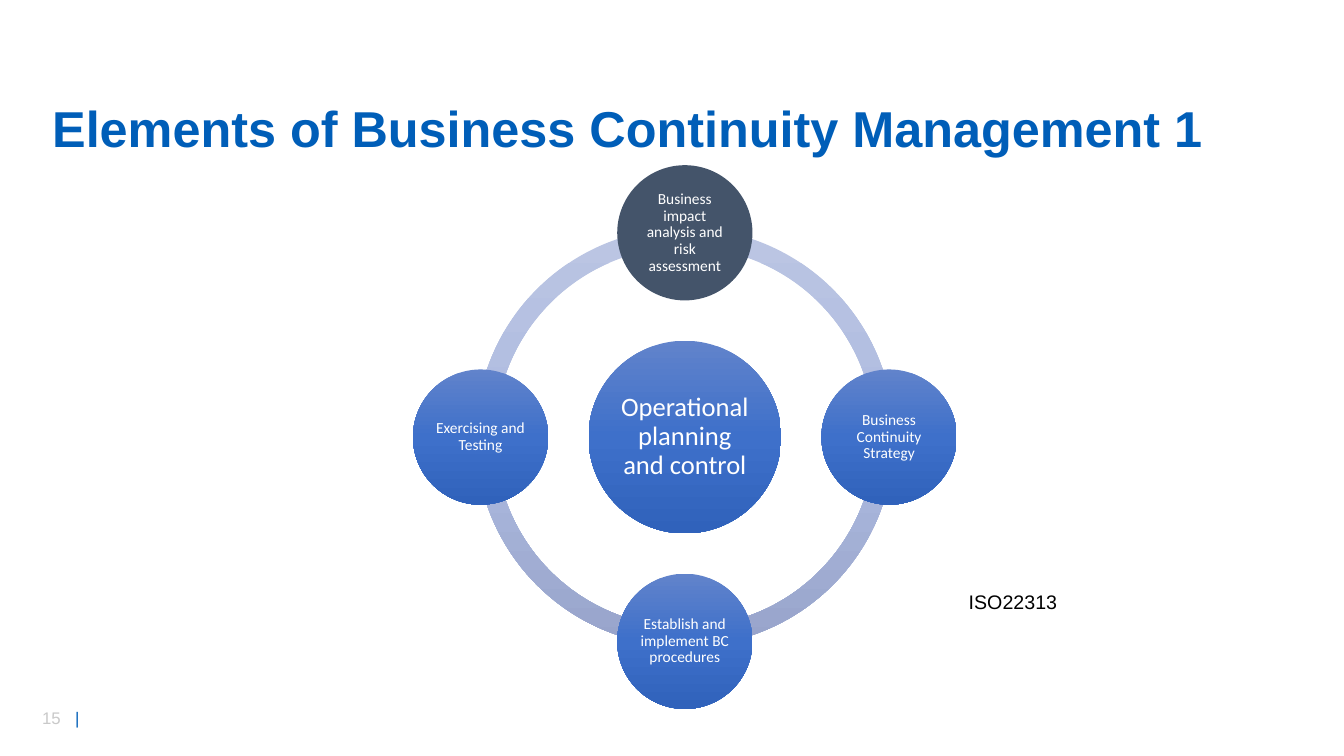
from copy import deepcopy
from dataclasses import dataclass
from math import cos, radians, sin

from lxml.etree import SubElement
from pptx import Presentation
from pptx.dml.color import RGBColor
from pptx.enum.shapes import MSO_SHAPE
from pptx.enum.text import MSO_ANCHOR, PP_ALIGN
from pptx.oxml.ns import qn
from pptx.util import Pt


@dataclass(frozen=True)
class Theme:
    heading_font: str = "Arial"
    diagram_font: str = "Calibri"
    blue: str = "005EB8"
    grey: str = "C9C9C9"
    black: str = "000000"
    white: str = "FFFFFF"
    slate: str = "44546A"
    disc: tuple = ("6183CB", "3E70CA", "3062BB")
    ring: tuple = ("BBC5E3", "AEBBE0", "98A4CB")
    title_size: float = 36
    hub_size: float = 19
    note_size: float = 14
    footer_size: float = 12
    node_size: float = 11


THEME = Theme()


def write_span(para, text, *, size, color, font=THEME.heading_font, bold=False):
    span = para.add_run()
    span.text = text
    span.font.name = font
    span.font.size = Pt(size)
    span.font.bold = bold
    span.font.color.rgb = RGBColor.from_string(color)


def set_frame(shape, *, side, top, anchor):
    frame = shape.text_frame
    frame.word_wrap = True
    frame.vertical_anchor = anchor
    frame.margin_left = frame.margin_right = Pt(side)
    frame.margin_top = frame.margin_bottom = Pt(top)
    return frame.paragraphs[0]


def add_text_box(page, box, *, side=7.2, top=3.6, anchor=MSO_ANCHOR.TOP):
    """Return the first paragraph of a new text box."""
    shape = page.shapes.add_textbox(*map(Pt, box))
    return set_frame(shape, side=side, top=top, anchor=anchor)


def paint(shape, colors):
    """Fill with one colour, or with an even gradient from top to bottom."""
    shape.shadow.inherit = False
    shape.line.fill.background()
    fill = shape.fill
    if isinstance(colors, str):
        fill.solid()
        fill.fore_color.rgb = RGBColor.from_string(colors)
        return
    fill.gradient()
    fill.gradient_angle = 270
    stops = shape._element.spPr.find(qn("a:gradFill")).find(qn("a:gsLst"))
    stops.insert(1, deepcopy(stops[0]))
    for index, (stop, color) in enumerate(zip(fill.gradient_stops, colors)):
        stop.position = index / (len(colors) - 1)
        stop.color.rgb = RGBColor.from_string(color)


def add_round(page, kind, center, diameter, colors):
    x, y = center
    shape = page.shapes.add_shape(kind, Pt(x - diameter / 2), Pt(y - diameter / 2),
                                  Pt(diameter), Pt(diameter))
    paint(shape, colors)
    return shape


def add_disc(page, center, diameter, text, *, size, inset, colors=THEME.disc):
    disc = add_round(page, MSO_SHAPE.OVAL, center, diameter, colors)
    para = set_frame(disc, side=inset, top=inset, anchor=MSO_ANCHOR.MIDDLE)
    para.alignment = PP_ALIGN.CENTER
    para.line_spacing = 0.9
    write_span(para, text, size=size, color=THEME.white, font=THEME.diagram_font)


def add_title(page, box, text):
    para = add_text_box(page, box, anchor=MSO_ANCHOR.MIDDLE)
    para.line_spacing = 0.9
    write_span(para, text, size=THEME.title_size, color=THEME.blue, bold=True)


def add_cycle(page, box, hub, nodes):
    """Draw a hub inside a ring of nodes, clockwise from the top."""
    left, top, side = box
    center = (left + side / 2, top + side / 2)
    node_diameter = 96.6
    orbit = (side - node_diameter) / 2
    step = 360 / len(nodes)

    # Ring, one arc between each pair of nodes
    full_turn = 216  # arc adjustments count 0.6 for each degree
    sweep = full_turn / len(nodes)
    for index in range(len(nodes)):
        arc = add_round(page, MSO_SHAPE.BLOCK_ARC, center, 298.8, THEME.ring)
        arc.adjustments[0] = index * sweep
        arc.adjustments[1] = (index + 1) * sweep % full_turn
        arc.adjustments[2] = 0.046

    # Hub
    add_disc(page, center, 137.6, hub, size=THEME.hub_size, inset=2)

    # Nodes
    for index, (text, colors) in enumerate(nodes):
        angle = radians(index * step - 90)
        spot = (center[0] + orbit * cos(angle), center[1] + orbit * sin(angle))
        add_disc(page, spot, node_diameter, text,
                 size=THEME.node_size, inset=1.1, colors=colors)


def add_note(page, box, text):
    para = add_text_box(page, box, side=0, top=0)
    write_span(para, text, size=THEME.note_size, color=THEME.black)


def add_page_number(page, box, number):
    para = add_text_box(page, box)
    tabs = SubElement(para._p.get_or_add_pPr(), qn("a:tabLst"))
    SubElement(tabs, qn("a:tab"), pos=str(Pt(23.5)), algn="l")
    write_span(para, number, size=THEME.footer_size, color=THEME.grey)
    write_span(para, "\t|", size=THEME.footer_size, color=THEME.blue)


def main():
    deck = Presentation()
    deck.slide_width, deck.slide_height = Pt(960), Pt(540)
    page = deck.slides.add_slide(deck.slide_layouts[6])

    add_page_number(page, (23, 502, 51, 21.6), "15")
    add_title(page, (30.2, 69.8, 838, 48.2),
              "Elements of Business Continuity Management 1")
    add_cycle(page, (295, 118, 388.4), "Operational planning and control", [
        ("Business impact analysis and risk assessment", THEME.slate),
        ("Business Continuity Strategy", THEME.disc),
        ("Establish and implement BC procedures", THEME.disc),
        ("Exercising and Testing", THEME.disc),
    ])
    add_note(page, (692, 421.2, 108, 17.3), "ISO22313")

    deck.save("out.pptx")


if __name__ == "__main__":
    main()
